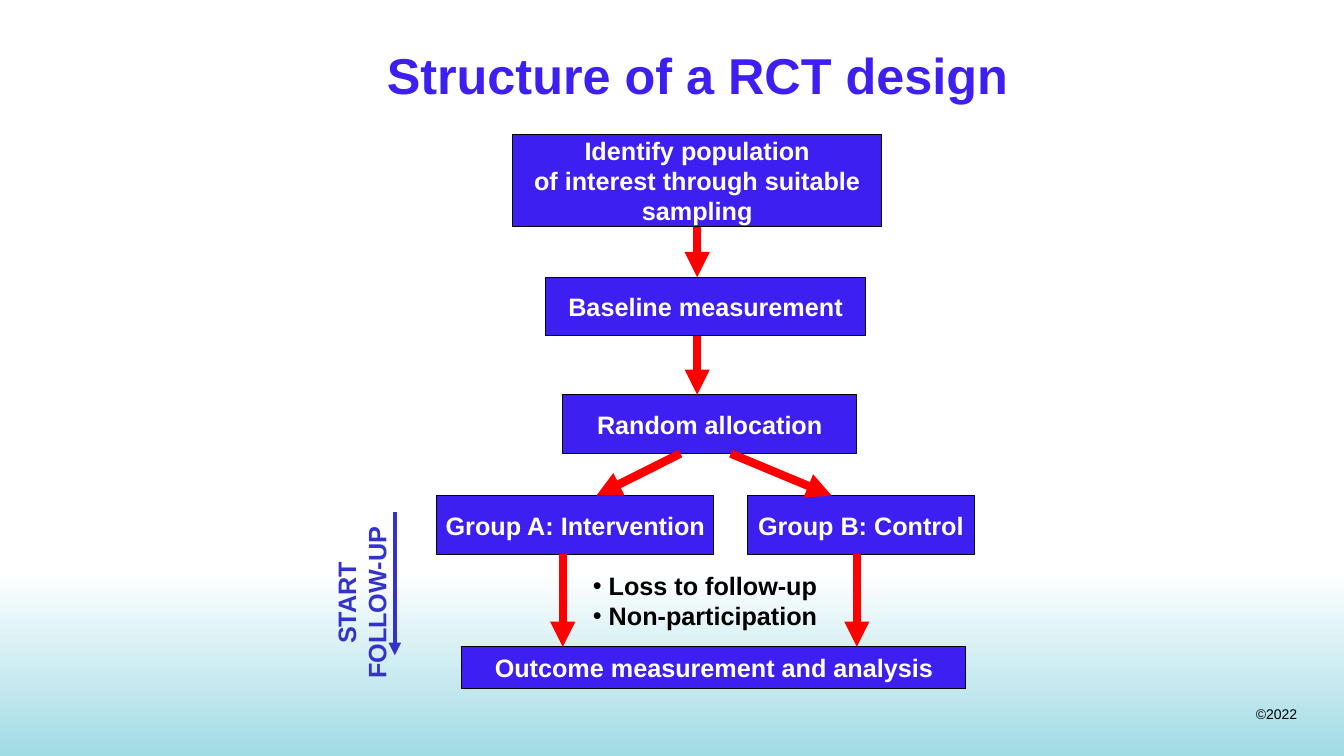
from pptx import Presentation, util as u
from pptx.dml import color
from pptx.enum import shapes, text
from pptx.oxml import ns
from lxml import etree

# Content: places are in grid cells, twelve to the inch (left, top, width, height)
SLIDE_CELLS = (160, 90)
VIOLET, RED, BLUE, BLACK, WHITE = "3D1FF1", "FF0000", "3333CC", "000000", "FFFFFF"
BAND, BAND_COLORS = (0, 68, 160, 22), (WHITE, "A1DBE4")

TITLE, TITLE_PLACE = "Structure of a RCT design", (38.9, 4.3, 88.3, 10.4)
STEPS = {
    "population": (["Identify population", "of interest through suitable", "sampling"],
                   (61, 16, 44, 11)),
    "baseline": (["Baseline measurement"], (65, 33, 38, 7)),
    "allocation": (["Random allocation"], (67, 47, 35, 7)),
    "intervention": (["Group A: Intervention"], (52, 59, 33, 7)),
    "control": (["Group B: Control"], (89, 59, 27, 7)),
    "outcome": (["Outcome measurement and analysis"], (55, 77, 60, 5)),
}
FLOW_ARROWS = [  # start x, start y, end x, end y
    (67, 66, 67, 77), (102, 66, 102, 77),
    (81, 54, 71, 59), (87, 54, 99, 59),
    (83, 40, 83, 47), (83, 27, 83, 33),
]
FOLLOW_UP, FOLLOW_UP_PLACE = ["START", "FOLLOW-UP"], (38, 58, 10, 24)
FOLLOW_UP_ARROW = (47, 61, 47, 78)
LOSSES, LOSSES_PLACE = ["Loss to follow-up", "Non-participation"], (69.4, 66, 31, 11)
COPYRIGHT, COPYRIGHT_PLACE = "©2022", (148.3, 83.4, 7.3, 3.2)


def cells(*counts):
    return [u.Cm(2.54 * count / 12) for count in counts]


def rgb(value):
    return color.RGBColor.from_string(value)


def write(shape, lines, size, ink, bold=True, align=text.PP_ALIGN.CENTER,
          anchor=text.MSO_ANCHOR.MIDDLE, wrap=False):
    frame = shape.text_frame
    frame.word_wrap, frame.vertical_anchor = wrap, anchor
    for index, line in enumerate(lines):
        paragraph = frame.add_paragraph() if index else frame.paragraphs[0]
        paragraph.alignment = align
        run = paragraph.add_run()
        run.text = line
        run.font.name, run.font.size, run.font.bold = "Arial", u.Pt(size), bold
        run.font.color.rgb = rgb(ink)
    return frame


def add_rectangle(place):
    shape = slide.shapes.add_shape(shapes.MSO_SHAPE.RECTANGLE, *cells(*place))
    shape.shadow.inherit = False
    return shape


def add_arrow(ends, ink, width):
    arrow = slide.shapes.add_connector(shapes.MSO_CONNECTOR.STRAIGHT, *cells(*ends))
    arrow.line.color.rgb, arrow.line.width = rgb(ink), u.Pt(width)
    etree.SubElement(arrow.line._get_or_add_ln(), ns.qn("a:tailEnd"), type="triangle")
    etree.SubElement(arrow._element.spPr, ns.qn("a:effectLst"))
    return arrow


presentation = Presentation()
presentation.slide_width, presentation.slide_height = cells(*SLIDE_CELLS)
slide = presentation.slides.add_slide(presentation.slide_layouts[5])

# Shaded band at the foot
band = add_rectangle(BAND)
band.line.fill.background()
band.fill.gradient()
band.fill.gradient_angle = 270
for stop, shade, position in zip(band.fill.gradient_stops, BAND_COLORS, (0, 1)):
    stop.color.rgb, stop.position = rgb(shade), position

copyright_box = slide.shapes.add_textbox(*cells(*COPYRIGHT_PLACE))
write(copyright_box, [COPYRIGHT], 10, BLACK, bold=False, align=text.PP_ALIGN.RIGHT,
      anchor=text.MSO_ANCHOR.TOP)

# Title
title = slide.shapes.title
title.left, title.top, title.width, title.height = cells(*TITLE_PLACE)
title_frame = write(title, [TITLE], 36, VIOLET, wrap=True)
title_frame.auto_size = text.MSO_AUTO_SIZE.NONE
title_frame.margin_bottom = u.Cm(0.38)

# Steps of the trial
boxes = {}
for name, (lines, place) in STEPS.items():
    box = boxes[name] = add_rectangle(place)
    box.fill.solid()
    box.fill.fore_color.rgb = rgb(VIOLET)
    box.line.color.rgb, box.line.width = rgb(BLACK), u.Pt(0.75)
    write(box, lines, 18, WHITE)

# Arrows between the steps; the last one leaves the middle of the first box
arrows = [add_arrow(ends, RED, 6) for ends in FLOW_ARROWS]
arrows[-1].begin_connect(boxes["population"], 2)

# Follow-up period, reading upwards
follow_up = slide.shapes.add_textbox(*cells(*FOLLOW_UP_PLACE))
follow_up.rotation = 180
follow_up_frame = write(follow_up, FOLLOW_UP, 18, BLUE)
follow_up_frame._txBody.bodyPr.set("vert", "eaVert")
add_arrow(FOLLOW_UP_ARROW, BLUE, 3)

# Bulleted losses between the groups, with a hanging indent
losses = slide.shapes.add_textbox(*cells(*LOSSES_PLACE))
losses_frame = write(losses, LOSSES, 18, BLACK, align=text.PP_ALIGN.LEFT, wrap=True)
hanging = u.Cm(0.4)
for paragraph in losses_frame.paragraphs:
    properties = paragraph._p.get_or_add_pPr()
    properties.set("marL", str(hanging))
    properties.set("indent", str(-hanging))
    etree.SubElement(properties, ns.qn("a:buFont"), typeface="Arial")
    etree.SubElement(properties, ns.qn("a:buChar"), char="•")

presentation.save("out.pptx")
